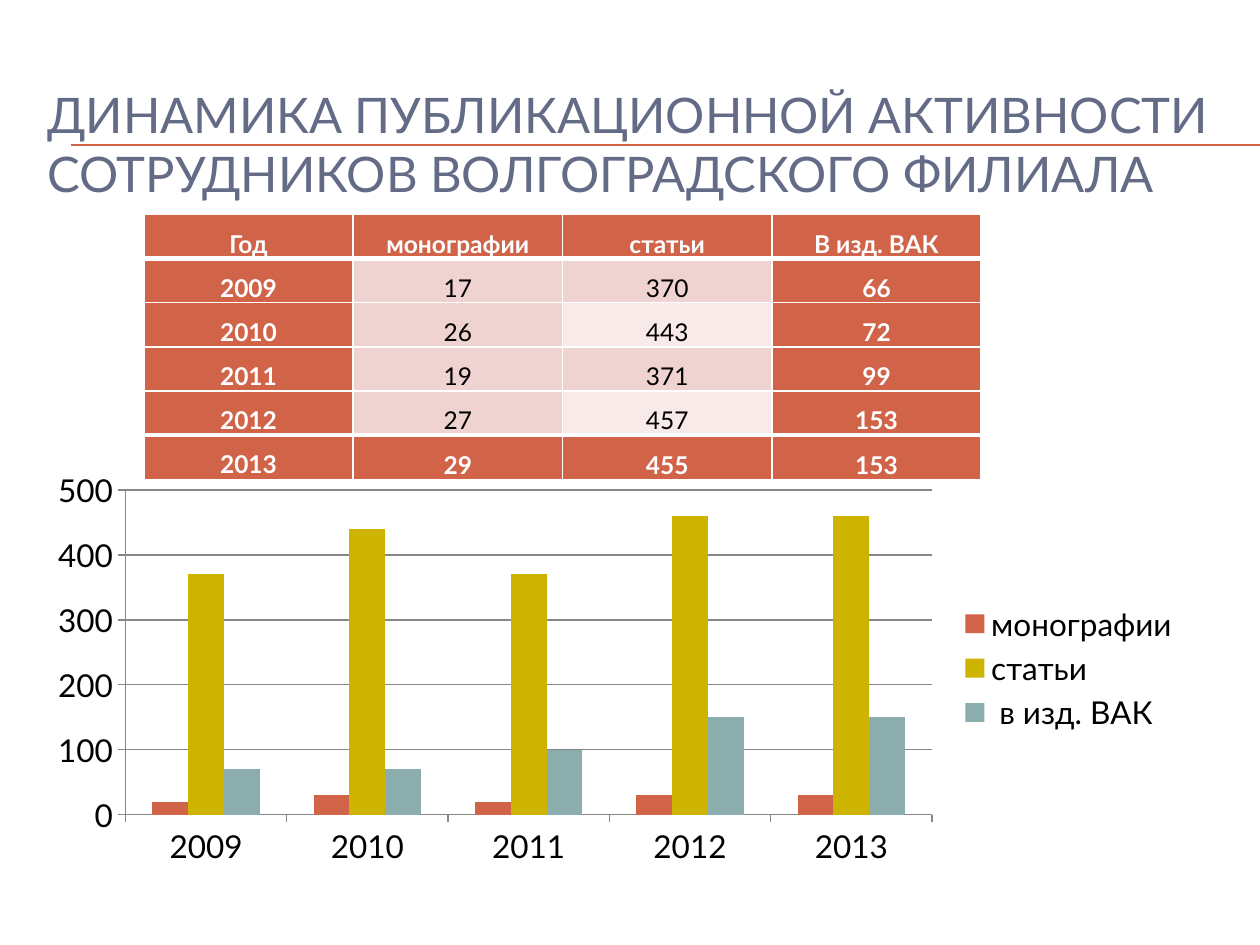
from lxml import etree
from pptx import Presentation
from pptx.chart.data import CategoryChartData
from pptx.dml.color import RGBColor
from pptx.enum.chart import XL_CHART_TYPE, XL_LEGEND_POSITION, XL_TICK_MARK
from pptx.enum.shapes import MSO_CONNECTOR
from pptx.enum.text import MSO_ANCHOR, PP_ALIGN
from pptx.oxml.ns import qn
from pptx.util import Pt

COLUMN = XL_CHART_TYPE.COLUMN_CLUSTERED
LEGEND_RIGHT = XL_LEGEND_POSITION.RIGHT
TICK_OUT = XL_TICK_MARK.OUTSIDE
STRAIGHT = MSO_CONNECTOR.STRAIGHT
TOP, MIDDLE = MSO_ANCHOR.TOP, MSO_ANCHOR.MIDDLE
CENTER = PP_ALIGN.CENTER

FONT = "Lato"
RED, YELLOW, TEAL = "D16349", "CCB400", "8CADAE"
PINK, PALE, WHITE, BLACK = "EED3D0", "F7EAE9", "FFFFFF", "000000"
SLATE, GREY = "646B86", "868686"

YEARS = ["2009", "2010", "2011", "2012", "2013"]
MONOGRAPHS = [17, 26, 19, 27, 29]
ARTICLES = [370, 443, 371, 457, 455]
VAK = [66, 72, 99, 153, 153]


def rgb(color):
    return RGBColor.from_string(color)


def style_font(font, size, color, bold=False):
    font.name = FONT
    font.size = Pt(size)
    font.bold = bold
    font.color.rgb = rgb(color)


def style_line(line, color):
    line.color.rgb = rgb(color)
    line.width = Pt(0.75)


def add_rule(s, x1, x2, y):
    rule = s.shapes.add_connector(STRAIGHT, Pt(x1), Pt(y), Pt(x2), Pt(y))
    style_line(rule.line, RED)
    etree.SubElement(rule._element.spPr, qn("a:effectLst"))


def add_title(s, x, y, w, h, text):
    tf = s.shapes.add_textbox(Pt(x), Pt(y), Pt(w), Pt(h)).text_frame
    tf.word_wrap = True
    tf.vertical_anchor = MIDDLE
    r = tf.paragraphs[0].add_run()
    r.text = text
    style_font(r.font, 28, SLATE)


def set_borders(cell, top, bottom):
    """White borders: 1 pt at the sides, the given widths above and below."""
    tc_pr = cell._tc.get_or_add_tcPr()
    sides = (("lnL", 1), ("lnR", 1), ("lnT", top), ("lnB", bottom))
    for i, (tag, width) in enumerate(sides):
        ln = etree.Element(qn(f"a:{tag}"), w=str(Pt(width)))
        fill = etree.SubElement(ln, qn("a:solidFill"))
        etree.SubElement(fill, qn("a:srgbClr"), val=WHITE)
        tc_pr.insert(i, ln)


def fill_cell(cell, text, fill, color, bold):
    cell.fill.solid()
    cell.fill.fore_color.rgb = rgb(fill)
    cell.margin_left = cell.margin_right = Pt(5)
    cell.margin_top = cell.margin_bottom = 0
    p = cell.text_frame.paragraphs[0]
    p.alignment = CENTER
    p.line_spacing = 1.5
    r = p.add_run()
    r.text = text
    style_font(r.font, 14, color, bold)


def add_year_table(s, x, y, w, h):
    rows = [["Год", "монографии", "статьи", "В изд. ВАК"],
            *zip(YEARS, MONOGRAPHS, ARTICLES, VAK)]
    last = len(rows) - 1
    table = s.shapes.add_table(len(rows), 4, Pt(x), Pt(y), Pt(w), Pt(h)).table
    for i, row in enumerate(rows):
        for j, value in enumerate(row):
            cell = table.cell(i, j)
            if i in (0, last) or j in (0, 3):
                fill_cell(cell, str(value), RED, WHITE, True)
            else:
                fill = PALE if j == 2 and i % 2 == 0 else PINK
                fill_cell(cell, str(value), fill, BLACK, False)
            cell.vertical_anchor = TOP if j == 0 else MIDDLE
            set_borders(cell, 3 if i in (1, last) else 1,
                        3 if i in (0, last - 1) else 1)


def add_year_chart(s, x, y, w, h):
    data = CategoryChartData()
    data.categories = YEARS
    for name, counts in (("монографии", MONOGRAPHS), ("статьи", ARTICLES),
                         (" в изд. ВАК", VAK)):
        data.add_series(name, [round(n, -1) for n in counts])
    chart = s.shapes.add_chart(COLUMN, Pt(x), Pt(y), Pt(w), Pt(h), data).chart
    style_font(chart.font, 18, BLACK)
    chart.has_title = False
    chart.has_legend = True
    chart.legend.position = LEGEND_RIGHT
    chart.legend.include_in_layout = False

    plot = chart.plots[0]
    plot.gap_width = 150
    plot.overlap = 0
    plot.vary_by_categories = False
    for series, color in zip(plot.series, (RED, YELLOW, TEAL)):
        series.format.fill.solid()
        series.format.fill.fore_color.rgb = rgb(color)

    values = chart.value_axis
    values.minimum_scale, values.maximum_scale = 0, 500
    values.major_unit = 100
    values.has_major_gridlines = True
    style_line(values.major_gridlines.format.line, GREY)
    for axis in (chart.category_axis, values):
        axis.major_tick_mark = TICK_OUT
        style_line(axis.format.line, GREY)


def main():
    prs = Presentation()
    prs.slide_width, prs.slide_height = Pt(720), Pt(540)
    s = prs.slides.add_slide(prs.slide_layouts[6])
    for y in (82.8, 83.2):
        add_rule(s, 40.5, 720, y)
    add_title(s, 20, 49, 684, 66, "ДИНАМИКА ПУБЛИКАЦИОННОЙ АКТИВНОСТИ "
              "СОТРУДНИКОВ ВОЛГОГРАДСКОГО ФИЛИАЛА")
    add_year_table(s, 82.2, 122.5, 478.6, 151.2)
    add_year_chart(s, 20, 264.5, 661.5, 234.6)
    prs.save("out.pptx")


if __name__ == "__main__":
    main()
